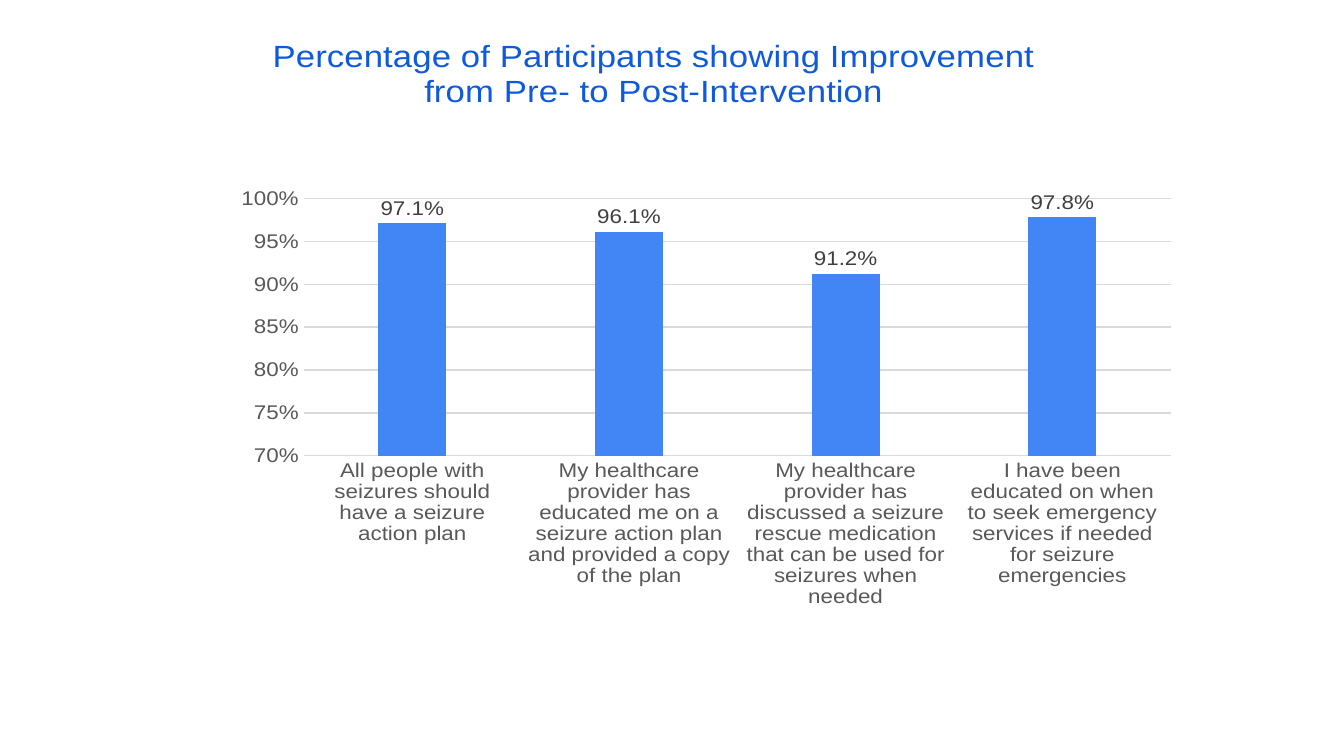
from lxml import etree
from pptx import Presentation
from pptx import util as u
from pptx.chart.data import CategoryChartData
from pptx.dml.color import RGBColor
from pptx.enum import chart as charts
from pptx.enum import text
from pptx.oxml.ns import qn

COLORS = {"title": "0D5BDC", "bar": "4285F4", "axis": "595959",
          "grid": "D9D9D9", "label": "404040", "base": "000000"}
RESULTS = {
    "All people with seizures should have a seizure action plan": 0.971,
    "My healthcare provider has educated me on a seizure action plan "
    "and provided a copy of the plan": 0.961,
    "My healthcare provider has discussed a seizure rescue medication "
    "that can be used for seizures when needed": 0.912,
    "I have been educated on when to seek emergency services "
    "if needed for seizure emergencies": 0.978,
}


def format_font(font, size, color):
    font.name = "Arial"
    font.size = u.Pt(size)
    font.bold = False
    font.color.rgb = RGBColor.from_string(COLORS[color])


def place(element, index, **settings):
    for layout in element.findall(qn("c:layout")):
        element.remove(layout)
    layout = etree.Element(qn("c:layout"))
    manual = etree.SubElement(layout, qn("c:manualLayout"))
    for name, value in settings.items():
        etree.SubElement(manual, qn(f"c:{name}")).set("val", str(value))
    element.insert(index, layout)


presentation = Presentation()
presentation.slide_width = u.Inches(10)
presentation.slide_height = presentation.slide_width * 9 // 16
slide = presentation.slides.add_slide(presentation.slide_layouts[6])

data = CategoryChartData(number_format="0.0%")
data.categories = list(RESULTS)
data.add_series("Series 1", list(RESULTS.values()))
chart = slide.shapes.add_chart(
    charts.XL_CHART_TYPE.COLUMN_CLUSTERED, u.Inches(0.5), u.Inches(0.13),
    u.Inches(8.81), u.Inches(4.39), data).chart
format_font(chart.font, 10, "base")
chart.has_legend = False

title = chart.chart_title
frame = title.text_frame
frame.text = "Percentage of Participants showing Improvement\nfrom Pre- to Post-Intervention"
for paragraph in frame.paragraphs:
    paragraph.alignment = text.PP_ALIGN.CENTER
    format_font(paragraph.font, 18.6, "title")
    for run in paragraph.runs:
        format_font(run.font, 18.6, "title")
title.include_in_layout = False
place(title.element, 1, xMode="edge", yMode="edge", x=0.17, y=0.03)
place(chart.element.chart.plotArea, 0, layoutTarget="inner", xMode="edge",
      yMode="edge", x=0.2, y=0.348, w=0.732, h=0.494)

plot = chart.plots[0]
plot.gap_width = 219
plot.overlap = -27
plot.vary_by_categories = False
fill = plot.series[0].format.fill
fill.solid()
fill.fore_color.rgb = RGBColor.from_string(COLORS["bar"])

labels = plot.series[0].data_labels
labels.show_value = True
labels.number_format = "0.0%"
labels.number_format_is_linked = False
labels.position = charts.XL_LABEL_POSITION.OUTSIDE_END
format_font(labels.font, 12, "label")

category_axis, value_axis = chart.category_axis, chart.value_axis
for axis in (category_axis, value_axis):
    axis.major_tick_mark = charts.XL_TICK_MARK.NONE
    axis.minor_tick_mark = charts.XL_TICK_MARK.NONE
    format_font(axis.tick_labels.font, 12, "axis")

value_axis.minimum_scale = 0.7
value_axis.maximum_scale = 1
value_axis.major_unit = 0.05
value_axis.tick_labels.number_format = "0%"
value_axis.tick_labels.number_format_is_linked = False
value_axis.has_major_gridlines = True
value_axis.format.line.fill.background()
for line in (category_axis.format.line, value_axis.major_gridlines.format.line):
    line.color.rgb = RGBColor.from_string(COLORS["grid"])
    line.width = u.Pt(0.75)

presentation.save("out.pptx")
